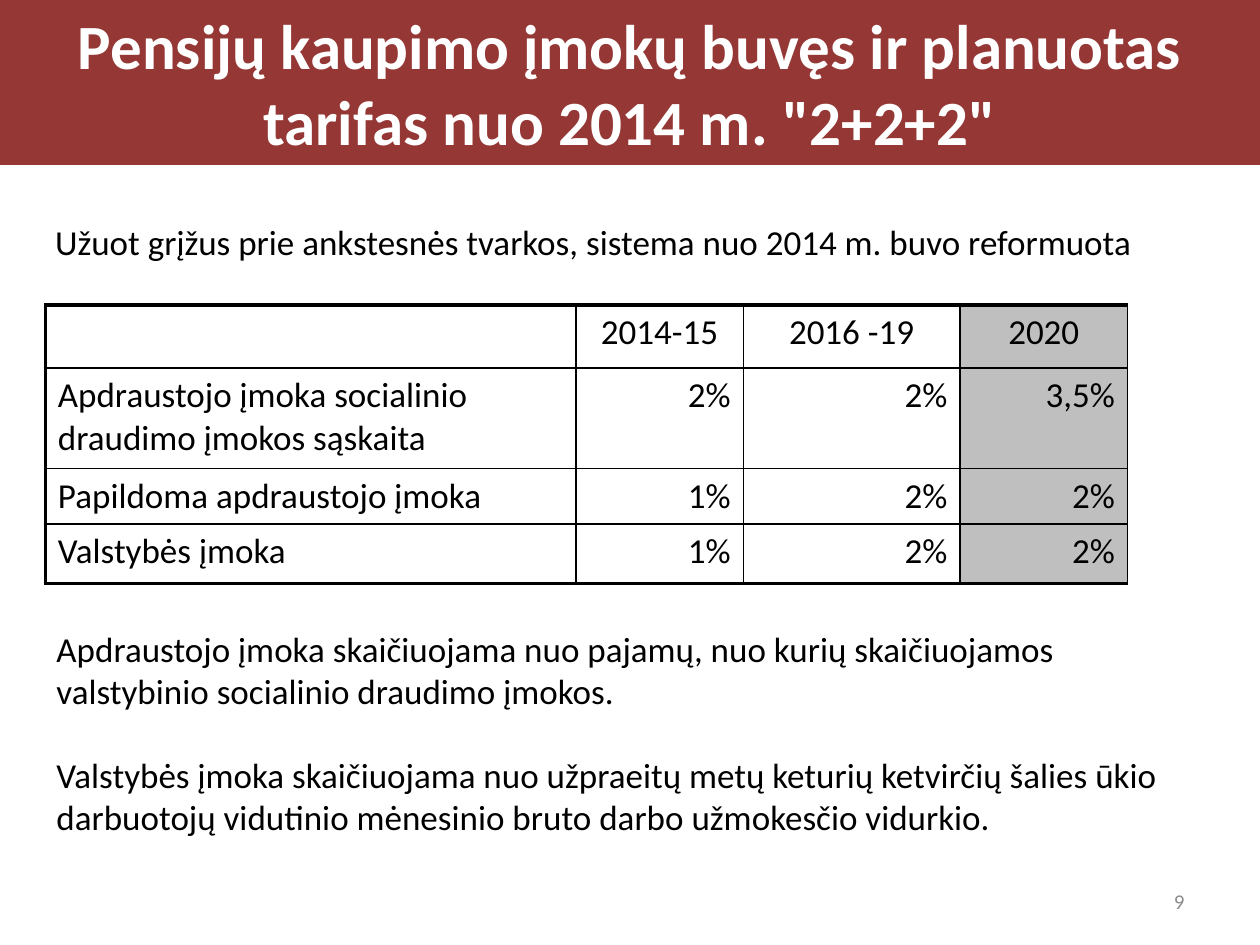
from lxml.etree import SubElement
from pptx import Presentation
from pptx.dml.color import RGBColor
from pptx.enum.text import MSO_ANCHOR, MSO_AUTO_SIZE, PP_ALIGN
from pptx.oxml.ns import qn
from pptx.util import Inches, Pt


def write(frame, paragraphs, size=20, color="000000", bold=False, **formats):
    """Fill a text frame; formats are paragraph attributes."""
    frame.word_wrap = True
    for index, text in enumerate(paragraphs):
        paragraph = frame.add_paragraph() if index else frame.paragraphs[0]
        run = paragraph.add_run()
        run.text = text
        for name, value in {"name": "Calibri", "size": Pt(size), "bold": bold}.items():
            setattr(run.font, name, value)
        run.font.color.rgb = RGBColor.from_string(color)
        for name, value in formats.items():
            setattr(paragraph, name, value)


def add_borders(cell, widths):
    """Draw black cell borders; widths maps L, R, T, B to points."""
    properties = cell._tc.get_or_add_tcPr()
    for position, (side, width) in enumerate(widths.items()):
        line = properties.makeelement(qn(f"a:ln{side}"), {"w": str(Pt(width))})
        fill = SubElement(line, qn("a:solidFill"))
        SubElement(fill, qn("a:srgbClr"), val="000000")
        properties.insert(position, line)


presentation = Presentation()
presentation.slide_width = Inches(10)
presentation.slide_height = Inches(7.5)
slide = presentation.slides.add_slide(presentation.slide_layouts[5])

# Title band
title = slide.shapes.title
band = {"left": 0, "top": 0, "width": Inches(10), "height": Inches(1.31)}
for name, value in band.items():
    setattr(title, name, value)
title.fill.solid()
title.fill.fore_color.rgb = RGBColor.from_string("953735")
title.text_frame.auto_size = MSO_AUTO_SIZE.NONE
title.text_frame.vertical_anchor = MSO_ANCHOR.MIDDLE
write(title.text_frame, ['Pensijų kaupimo įmokų buvęs ir planuotas tarifas nuo 2014 m. "2+2+2"'],
      size=36, color="FFFFFF", bold=True, alignment=PP_ALIGN.CENTER)

# Introduction
intro = slide.shapes.add_textbox(Inches(0.34), Inches(1.7), Inches(9.16), Inches(0.44))
write(intro.text_frame,
      ["Užuot grįžus prie ankstesnės tvarkos, sistema nuo 2014 m. buvo reformuota"],
      alignment=PP_ALIGN.JUSTIFY)

# Contribution rates
rates = [
    ["", "2014-15", "2016 -19", "2020"],
    ["Apdraustojo įmoka socialinio draudimo įmokos sąskaita", "2%", "2%", "3,5%"],
    ["Papildoma apdraustojo įmoka", "1%", "2%", "2%"],
    ["Valstybės įmoka", "1%", "2%", "2%"],
]
column_widths = [4.21, 1.33, 1.72, 1.33]
row_heights = [0.5, 0.8, 0.44, 0.47]
last_row, last_column = len(rates) - 1, len(column_widths) - 1
table = slide.shapes.add_table(len(rates), len(column_widths), Inches(0.36), Inches(2.42),
                               Inches(sum(column_widths)), Inches(sum(row_heights))).table
table.first_row = table.horz_banding = False
for column, width in zip(table.columns, column_widths):
    column.width = Inches(width)
for row, height in zip(table.rows, row_heights):
    row.height = Inches(height)

for row_index, row_texts in enumerate(rates):
    for column_index, text in enumerate(row_texts):
        cell = table.cell(row_index, column_index)
        cell.fill.solid()
        shade = "BFBFBF" if column_index == last_column else "FFFFFF"
        cell.fill.fore_color.rgb = RGBColor.from_string(shade)
        add_borders(cell, {
            "L": 2.25 if column_index == 0 else 1,
            "R": 1,
            "T": 2.25 if row_index == 0 else 1,
            "B": 2.25 if row_index == last_row else 1,
        })
        if column_index == 0:
            alignment = PP_ALIGN.LEFT
        else:
            alignment = PP_ALIGN.RIGHT if row_index else PP_ALIGN.CENTER
        if text:
            write(cell.text_frame, [text], alignment=alignment)

# Explanations, one line apart
explanations = slide.shapes.add_textbox(Inches(0.35), Inches(4.93), Inches(9.37), Inches(1.78))
write(explanations.text_frame, [
    "Apdraustojo įmoka skaičiuojama nuo pajamų, nuo kurių skaičiuojamos "
    "valstybinio socialinio draudimo įmokos.",
    "Valstybės įmoka skaičiuojama nuo užpraeitų metų keturių ketvirčių šalies ūkio "
    "darbuotojų vidutinio mėnesinio bruto darbo užmokesčio vidurkio.",
])
explanations.text_frame.paragraphs[1].space_before = Pt(24)

# Slide number
number = slide.shapes.add_textbox(Inches(7.17), Inches(6.95), Inches(2.33), Inches(0.4))
number.text_frame.vertical_anchor = MSO_ANCHOR.MIDDLE
write(number.text_frame, ["9"], size=12, color="8C8C8C", alignment=PP_ALIGN.RIGHT)

presentation.save("out.pptx")
